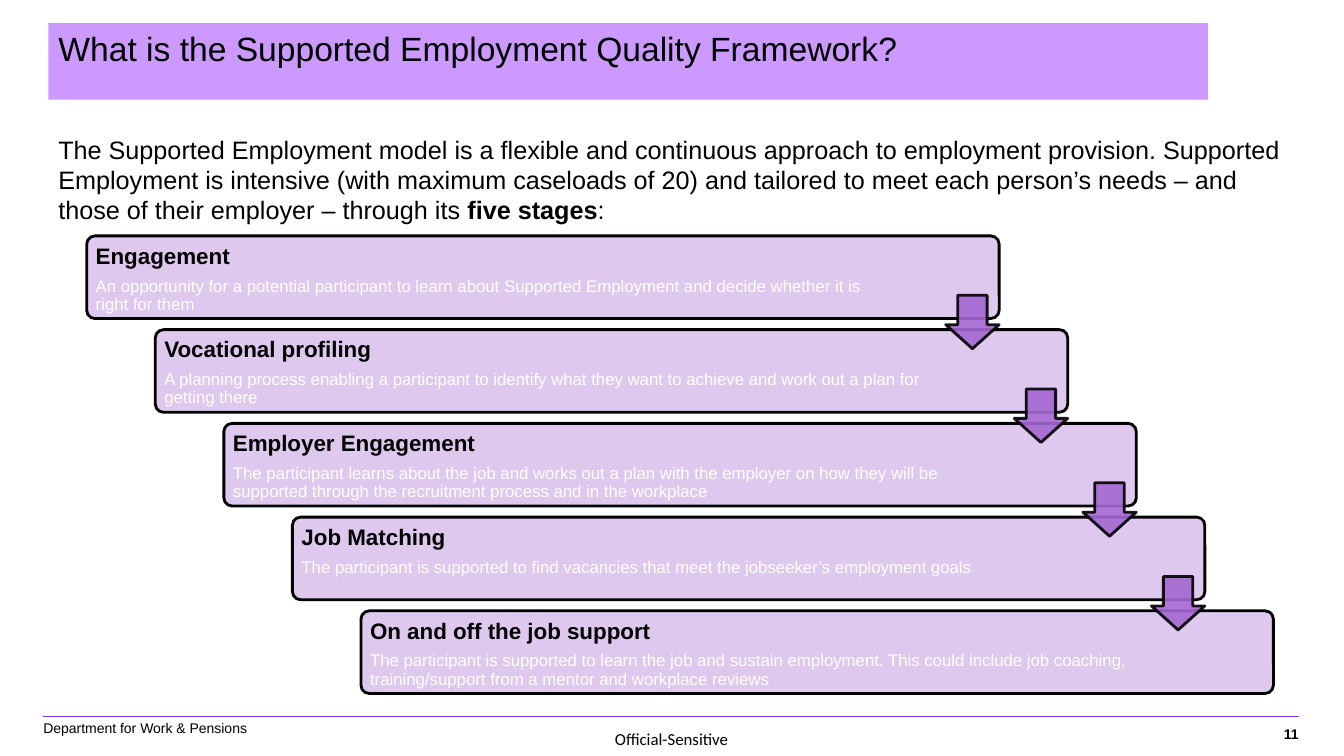
from pptx import Presentation
from pptx.dml.color import RGBColor
from pptx.enum import shapes as sh, text as tx
from pptx.oxml import parse_xml
from pptx.oxml.ns import nsdecls, qn
from pptx.util import Inches, Pt

COLORS = {
    "black": "000000",
    "white": "FFFFFF",
    "title": "CC99FF",
    "stage": "DEC8EE",
    "arrow": "A568D2",
    "rule": "8238EB",
}
STAGES = [
    ("Engagement",
     "An opportunity for a potential participant to learn about Supported "
     "Employment and decide whether it is right for them"),
    ("Vocational profiling",
     "A planning process enabling a participant to identify what they want "
     "to achieve and work out a plan for getting there"),
    ("Employer Engagement",
     "The participant learns about the job and works out a plan with the "
     "employer on how they will be supported through the recruitment process "
     "and in the workplace"),
    ("Job Matching",
     "The participant is supported to find vacancies that meet the "
     "jobseeker’s employment goals"),
    ("On and off the job support",
     "The participant is supported to learn the job and sustain employment. "
     "This could include job coaching, training/support from a mentor and "
     "workplace reviews"),
]
STEP_X, STEP_Y = 0.68, 0.93


def rgb(name):
    return RGBColor.from_string(COLORS[name])


def style(para, size, color="black", bold=False, face="Arial"):
    font = para.font
    font.name, font.size, font.bold = face, Pt(size), bold
    font.color.rgb = rgb(color)


def add_box(slide, x, y, w, h, inset=0):
    """Add an empty text box with equal insets and return its frame."""
    box = slide.shapes.add_textbox(Inches(x), Inches(y), Inches(w), Inches(h))
    frame = box.text_frame
    frame.word_wrap = True
    frame.margin_left = frame.margin_right = Inches(inset)
    frame.margin_top = frame.margin_bottom = Inches(inset)
    return frame


def add_label(slide, x, y, w, h, label, size, **look):
    para = add_box(slide, x, y, w, h).paragraphs[0]
    para.text = label
    style(para, size, **look)
    return para


def add_block(slide, kind, x, y, w, h, fill, adjust):
    block = slide.shapes.add_shape(
        kind, Inches(x), Inches(y), Inches(w), Inches(h))
    block.shadow.inherit = False
    for i, value in enumerate(adjust):
        block.adjustments[i] = value
    block.fill.solid()
    block.fill.fore_color.rgb = rgb(fill)
    block.line.color.rgb = rgb("black")
    block.line.width = Pt(2)
    return block


def add_title(slide):
    title = slide.shapes.title
    title.left, title.top = Inches(0.48), Inches(0.23)
    title.width, title.height = Inches(11.5), Inches(0.76)
    title.fill.solid()
    title.fill.fore_color.rgb = rgb("title")
    frame = title.text_frame
    frame.text = "What is the Supported Employment Quality Framework?"
    frame.auto_size = tx.MSO_AUTO_SIZE.NONE
    frame.vertical_anchor = tx.MSO_ANCHOR.TOP
    para = frame.paragraphs[0]
    para.alignment = tx.PP_ALIGN.LEFT
    style(para, 24)


def add_intro(slide):
    frame = add_box(slide, 0.48, 1.28, 12.43, 1.01, 0.1)
    frame.margin_top = frame.margin_bottom = Inches(0.05)
    para = frame.paragraphs[0]
    style(para, 18)
    para.add_run().text = (
        "The Supported Employment model is a flexible and continuous approach "
        "to employment provision. Supported Employment is intensive (with "
        "maximum caseloads of 20) and tailored to meet each person’s needs – "
        "and those of their employer – through its ")
    key = para.add_run()
    key.text = "five stages"
    key.font.bold = True
    para.add_run().text = ":"


def add_stage(slide, i, head, detail):
    x, y = 0.86 + i * STEP_X, 2.34 + i * STEP_Y
    add_block(slide, sh.MSO_SHAPE.ROUNDED_RECTANGLE,
              x, y, 9.05, 0.82, "stage", [0.1])
    width = 7.79 if i else 8.07
    frame = add_box(slide, x + 0.02, y + 0.02, width, 0.77, 0.07)
    frame.text = f"{head}\n{detail}"
    top, body = frame.paragraphs
    style(top, 16, bold=True)
    style(body, 12, "white")
    for para in (top, body):
        para.line_spacing = 0.9
        para.space_after = Pt(6)


def add_arrow(slide, i):
    arrow = add_block(slide, sh.MSO_SHAPE.DOWN_ARROW,
                      9.38 + i * STEP_X, 2.93 + i * STEP_Y,
                      0.53, 0.53, "arrow", [0.55, 0.45])
    for color in arrow._element.spPr.iter(qn("a:srgbClr")):
        color.append(parse_xml(f'<a:alpha {nsdecls("a")} val="90000"/>'))


def add_footer(slide):
    rule = slide.shapes.add_connector(
        sh.MSO_CONNECTOR.STRAIGHT,
        Inches(0.43), Inches(7.11), Inches(12.88), Inches(7.11))
    rule.line.color.rgb = rgb("rule")
    rule.line.width = Pt(0.75)
    rule._element.spPr.append(parse_xml(f'<a:effectLst {nsdecls("a")}/>'))
    number = add_label(slide, 12.14, 7.18, 0.74, 0.16, "11", 10, bold=True)
    number.alignment = tx.PP_ALIGN.RIGHT
    number.line_spacing = 1.1
    add_label(slide, 0.43, 7.14, 2.04, 0.17,
              "Department for Work & Pensions", 10)
    add_label(slide, 6.1, 7.23, 1.17, 0.2,
              "Official-Sensitive", 12, face="Calibri")


def main():
    deck = Presentation()
    deck.slide_width, deck.slide_height = Inches(13.33), Inches(7.5)
    slide = deck.slides.add_slide(deck.slide_layouts[5])
    add_footer(slide)
    add_title(slide)
    add_intro(slide)
    for i, (head, detail) in enumerate(STAGES):
        add_stage(slide, i, head, detail)
    for i in range(len(STAGES) - 1):
        add_arrow(slide, i)
    deck.save("out.pptx")


if __name__ == "__main__":
    main()
